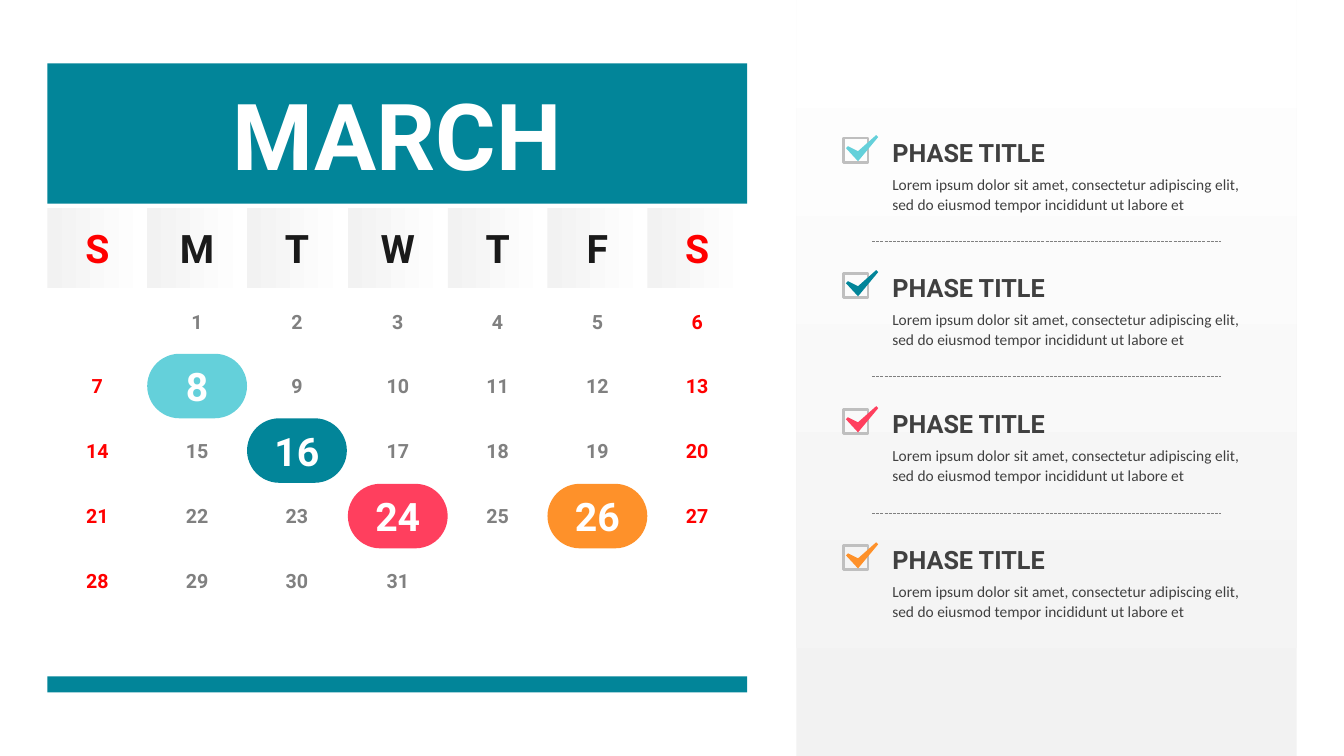
from pptx import Presentation
from pptx.dml.color import RGBColor
from pptx.enum.dml import MSO_LINE
from pptx.enum.shapes import MSO_CONNECTOR, MSO_SHAPE
from pptx.enum.text import MSO_ANCHOR, MSO_AUTO_SIZE, PP_ALIGN
from pptx.oxml.ns import qn
from pptx.util import Pt
from lxml import etree

PX = 9144  # 100 px to the inch

RECT, PILL = MSO_SHAPE.RECTANGLE, MSO_SHAPE.ROUNDED_RECTANGLE
STRAIGHT = MSO_CONNECTOR.STRAIGHT
SYS_DASH = MSO_LINE.SQUARE_DOT
TOP, MIDDLE = MSO_ANCHOR.TOP, MSO_ANCHOR.MIDDLE
LEFT, CENTER = PP_ALIGN.LEFT, PP_ALIGN.CENTER
NO_FIT, GROW = MSO_AUTO_SIZE.NONE, MSO_AUTO_SIZE.SHAPE_TO_FIT_TEXT

WHITE = RGBColor(0xFF, 0xFF, 0xFF)
PALE = RGBColor(0xF2, 0xF2, 0xF2)
SILVER = RGBColor(0xBF, 0xBF, 0xBF)
GREY = RGBColor(0x80, 0x80, 0x80)
DARK = RGBColor(0x40, 0x40, 0x40)
BLACK = RGBColor(0x1A, 0x1A, 0x1A)
RED = RGBColor(0xFF, 0x00, 0x00)
AQUA = RGBColor(0x64, 0xD0, 0xDA)
TEAL = RGBColor(0x02, 0x85, 0x99)
PINK = RGBColor(0xFF, 0x3F, 0x5E)
ORANGE = RGBColor(0xFE, 0x91, 0x2A)

WEEKDAYS = "SMTWTFS"
MARKED_DAYS = {8: AQUA, 16: TEAL, 24: PINK, 26: ORANGE}
PHASE_TEXT = ("Lorem ipsum dolor sit amet, consectetur adipiscing elit, "
              "sed do eiusmod tempor incididunt ut labore et")
# Outline of the tick, measured from the corner of its box
TICK = [(32, -3), (34, -1), (14, 23), (2, 10), (4, 8), (14, 13)]


def write(p, text, size=14, color=GREY, font="Roboto", bold=True,
          align=CENTER, spacing=1.0, before=0):
    p.alignment = align
    p.line_spacing = spacing
    p.space_before = Pt(before)
    r = p.add_run()
    r.text = text
    r.font.size = Pt(size)
    r.font.name = font
    r.font.bold = bold
    r.font.color.rgb = color


class CalendarSlide:
    def __init__(self, prs):
        self.s = prs.slides.add_slide(prs.slide_layouts[5])

    def frame(self, sp, anchor=MIDDLE, fit=NO_FIT):
        """Give the shape a wrapped text frame without margins."""
        tf = sp.text_frame
        tf.word_wrap = True
        tf.auto_size = fit
        tf.vertical_anchor = anchor
        tf.margin_left = tf.margin_top = tf.margin_right = tf.margin_bottom = 0
        return tf

    def title(self, text, x, y, w, h, fill):
        sp = self.s.shapes.title
        sp.left, sp.top, sp.width, sp.height = [v * PX for v in (x, y, w, h)]
        sp.fill.solid()
        sp.fill.fore_color.rgb = fill
        write(self.frame(sp).paragraphs[0], text, size=66, color=WHITE)

    def shape(self, kind, x, y, w, h, fill=None, line=None):
        sp = self.s.shapes.add_shape(kind, x * PX, y * PX, w * PX, h * PX)
        return self.paint(sp, fill, line)

    def paint(self, sp, fill=None, line=None):
        sp.shadow.inherit = False
        if fill is None:
            sp.fill.background()
        else:
            sp.fill.solid()
            sp.fill.fore_color.rgb = fill
        if line is None:
            sp.line.fill.background()
        else:
            sp.line.color.rgb = line
            sp.line.width = Pt(2)
        return sp

    def fade(self, x, y, w, h, angle):
        """Add a rectangle that fades from pale grey to white."""
        sp = self.shape(RECT, x, y, w, h)
        sp.fill.gradient()
        sp.fill.gradient_angle = angle
        for stop, color, position in zip(sp.fill.gradient_stops, (PALE, WHITE), (0, 1)):
            stop.color.rgb = color
            stop.position = position
        return sp

    def text_box(self, x, y, w, h):
        return self.s.shapes.add_textbox(x * PX, y * PX, w * PX, h * PX)

    def day(self, number, x, y, w, h, color, mark=None):
        if mark is None:
            sp = self.text_box(x, y, w, h)
            write(self.frame(sp).paragraphs[0], str(number), color=color)
        else:
            sp = self.shape(PILL, x, y, w, h, mark)
            sp.adjustments[0] = 0.5
            write(self.frame(sp).paragraphs[0], str(number), size=28, color=WHITE)

    def tick_box(self, x, y, color):
        self.shape(RECT, x, y, 24, 24, line=SILVER)
        points = [(x + dx, y + dy) for dx, dy in TICK]
        builder = self.s.shapes.build_freeform(*points[0], scale=PX)
        builder.add_line_segments(points[1:], close=True)
        self.paint(builder.convert_to_shape(), color)

    def phase(self, x, y, color):
        self.tick_box(x, y, color)
        tf = self.frame(self.text_box(x + 48, y - 4, 354, 80), TOP, GROW)
        layout = dict(color=DARK, align=LEFT, spacing=1.1, before=4)
        write(tf.paragraphs[0], "PHASE TITLE", size=18, **layout)
        write(tf.add_paragraph(), PHASE_TEXT, size=11, font="Calibri",
              bold=False, **layout)

    def dashed_line(self, x1, x2, y):
        line = self.s.shapes.add_connector(STRAIGHT, x1 * PX, y * PX, x2 * PX, y * PX)
        line.line.color.rgb = GREY
        line.line.width = Pt(0.75)
        line.line.dash_style = SYS_DASH
        etree.SubElement(line._element.spPr, qn("a:effectLst"))


def main():
    prs = Presentation()
    prs.slide_width, prs.slide_height = 1333 * PX, 750 * PX
    slide = CalendarSlide(prs)

    slide.title("MARCH", 47, 63, 694, 139, TEAL)
    columns = [47 + round(99.2 * i) for i in range(7)]
    rows = [287 + round(64.2 * i) for i in range(5)]
    for i, (x, name) in enumerate(zip(columns, WEEKDAYS)):
        sp = slide.fade(x, 206, 99, 80, 0)
        write(slide.frame(sp).paragraphs[0], name, size=28,
              color=RED if i in (0, 6) else BLACK)
    for number in range(1, 32):
        row, column = divmod(number, 7)
        slide.day(number, columns[column], rows[row], 99, 64,
                  RED if column in (0, 6) else GREY, MARKED_DAYS.get(number))
    slide.shape(RECT, 47, 671, 694, 16, TEAL)

    slide.fade(790, 0, 496, 750, 90)
    for i, color in enumerate(MARKED_DAYS.values()):
        y = 137 + i * 404 // 3
        slide.phase(837, y, color)
        if i < len(MARKED_DAYS) - 1:
            slide.dashed_line(865, 1211, y + 103)

    prs.save("out.pptx")


if __name__ == "__main__":
    main()
